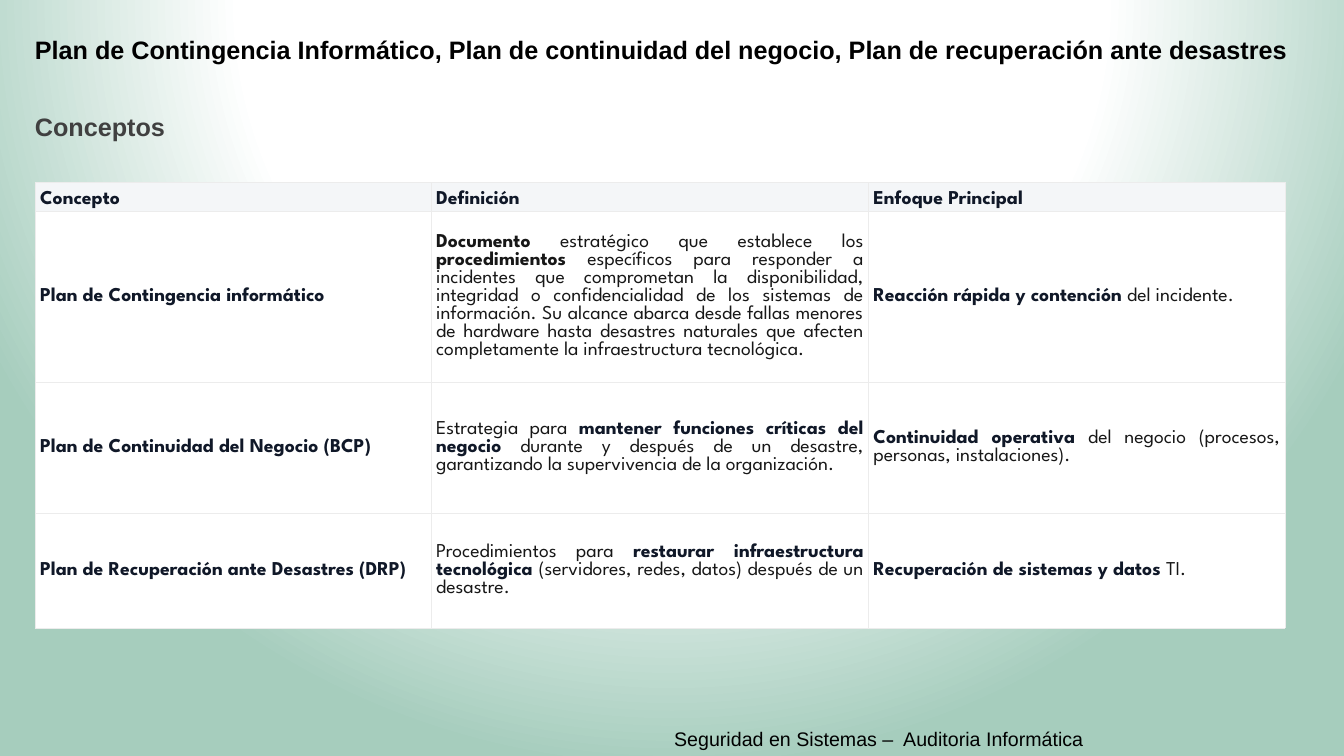
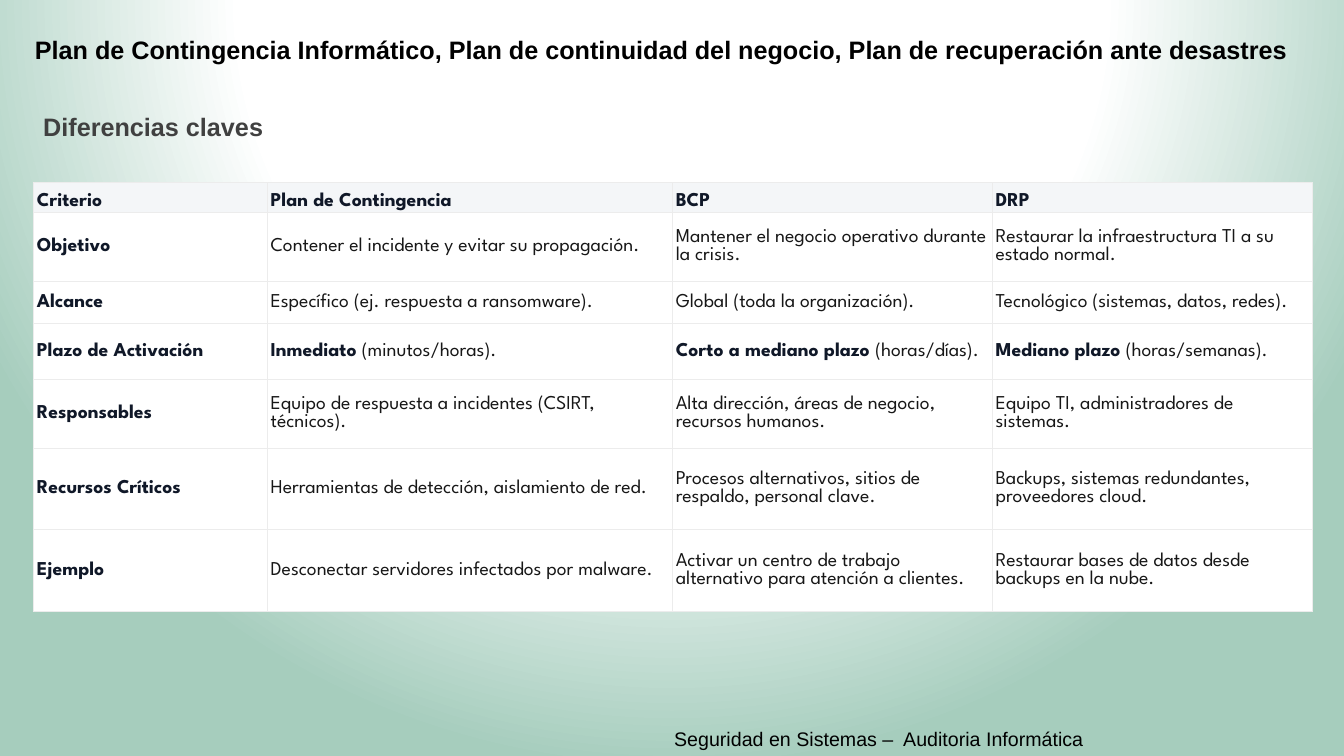
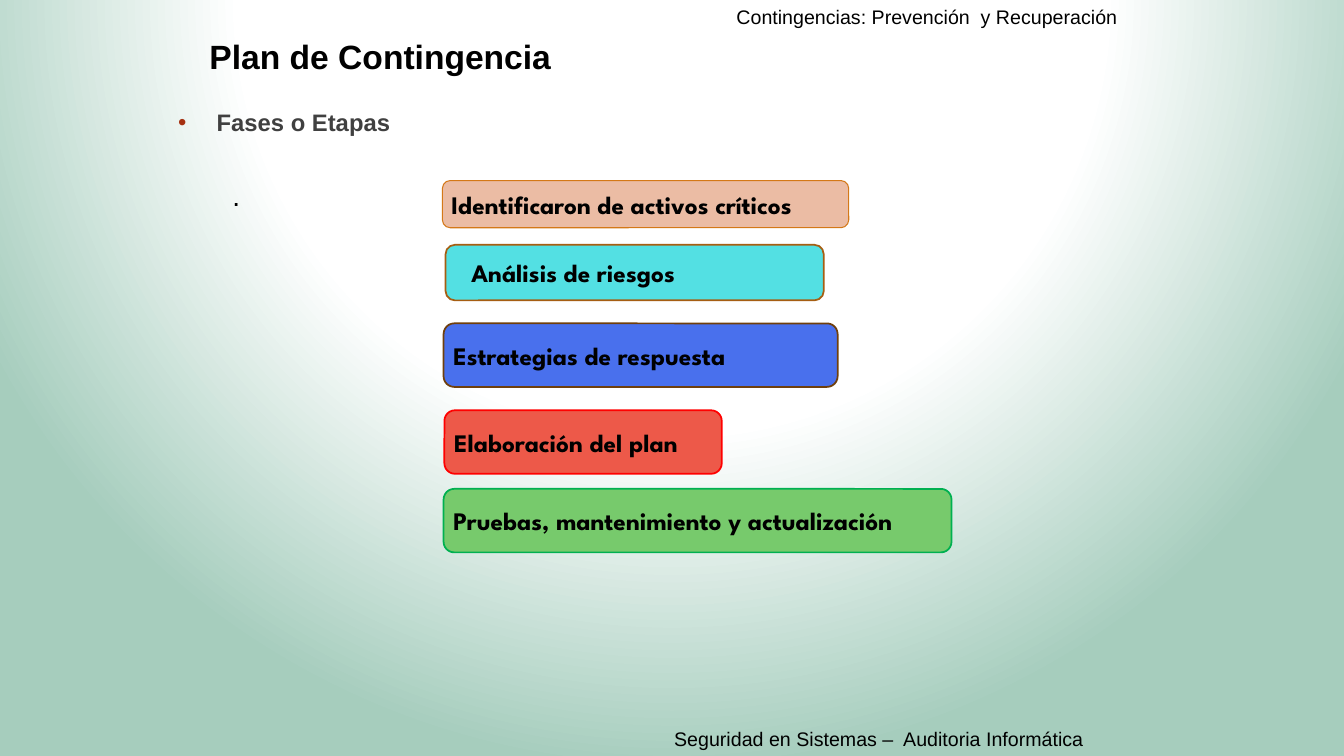
import dataclasses
import typing

import lxml.etree
import pptx
import pptx.dml.color
import pptx.enum.shapes
import pptx.enum.text
import pptx.oxml.ns
import pptx.presentation
import pptx.shapes.autoshape
import pptx.slide
import pptx.table
import pptx.text.text
import pptx.util

qn = pptx.oxml.ns.qn
LEFT = pptx.enum.text.PP_ALIGN.LEFT
JUSTIFY = pptx.enum.text.PP_ALIGN.JUSTIFY
TOP = pptx.enum.text.MSO_ANCHOR.TOP
MIDDLE = pptx.enum.text.MSO_ANCHOR.MIDDLE
BOTTOM = pptx.enum.text.MSO_ANCHOR.BOTTOM


@dataclasses.dataclass(frozen=True)
class Theme:
    sans: str = "Arial"
    display: str = "League Spartan"
    black: str = "000000"
    subtitle: str = "404040"
    key: str = "101828"
    body: str = "171717"
    bullet: str = "A53010"
    header_fill: str = "F4F6F8"
    cell_fill: str = "FFFFFF"
    border: str = "ECECEC"
    background: tuple[tuple[int, str], ...] = ((0, "FFFFFF"), (56, "FFFFFF"), (100, "A6CDBD"))
    small: float = 14
    bullet_size: float = 17
    heading: float = 18
    dot: float = 20
    title: float = 24
    border_width: float = 0.6


THEME = Theme()


class Box(typing.NamedTuple):
    """Left, top, width and height in centimetres."""
    left: float
    top: float
    width: float
    height: float

    def lengths(self) -> list[pptx.util.Length]:
        return [pptx.util.Cm(value) for value in self]


class Style(typing.NamedTuple):
    font: str
    size: float
    color: str
    bold: bool = False


class Run(typing.NamedTuple):
    text: str
    style: Style


class Phase(typing.NamedTuple):
    text: str
    box: Box
    fill: str
    line: str
    line_width: float = 1.25
    indent: float = 0.25


Cell = str | tuple[Run, ...]


class Grid(typing.NamedTuple):
    """Table content and measures; lengths in centimetres."""
    left: float
    columns: tuple[float, ...]
    heights: tuple[float, ...]
    inset_x: float
    inset_y: float
    align: pptx.enum.text.PP_ALIGN
    rows: tuple[tuple[Cell, ...], ...]


NOTE = Style(THEME.sans, THEME.small, THEME.black)
HEADING = Style(THEME.sans, THEME.heading, THEME.black, True)
BIG_TITLE = Style(THEME.sans, THEME.title, THEME.black, True)
SUBTITLE = Style(THEME.sans, THEME.heading, THEME.subtitle, True)
BULLET = Style(THEME.sans, THEME.bullet_size, THEME.subtitle, True)
DOT = Style(THEME.sans, THEME.dot, THEME.black)
PHASE = Style(THEME.display, THEME.heading, THEME.black, True)
KEY = Style(THEME.display, THEME.small, THEME.key, True)
BODY = Style(THEME.display, THEME.small, THEME.body)
STRONG = BODY._replace(bold=True)

TABLE_TOP = 4.6
FOOTER = "Seguridad en Sistemas –  Auditoria Informática"
PLANS_TITLE = ("Plan de Contingencia Informático, Plan de continuidad del negocio, "
               "Plan de recuperación ante desastres")

CONCEPTS = Grid(0.89, (9.98, 11.02, 10.49), (0.53, 4.09, 3.3, 2.9), 0.12, 0.07, JUSTIFY, (
    ("Concepto", "Definición", "Enfoque Principal"),
    ("Plan de Contingencia informático",
     (Run("Documento", STRONG),
      Run(" estratégico que establece los ", BODY),
      Run("procedimientos", STRONG),
      Run(" específicos para responder a incidentes que comprometan la disponibilidad, "
          "integridad o confidencialidad de los sistemas de información. Su alcance abarca "
          "desde fallas menores de hardware hasta desastres naturales que afecten "
          "completamente la infraestructura tecnológica.", BODY)),
     (Run("Reacción rápida y contención", KEY), Run(" del incidente.", BODY))),
    ("Plan de Continuidad del Negocio (BCP)",
     (Run("Estrategia para ", BODY),
      Run("mantener funciones críticas del negocio", KEY),
      Run(" durante y después de un desastre, garantizando la supervivencia "
          "de la organización.", BODY)),
     (Run("Continuidad operativa", KEY),
      Run(" del negocio (procesos, personas, instalaciones).", BODY))),
    ("Plan de Recuperación ante Desastres (DRP)",
     (Run("Procedimientos para ", BODY),
      Run("restaurar infraestructura tecnológica", KEY),
      Run(" (servidores, redes, datos) después de un desastre.", BODY)),
     (Run("Recuperación de sistemas y datos", KEY), Run(" TI.", BODY))),
))

DIFFERENCES = Grid(
    0.84, (5.89, 10.21, 8.06, 8.06), (0.76, 1.73, 1.07, 1.4, 1.73, 2.06, 2.06), 0.09, 0.05, LEFT, (
        ("Criterio", "Plan de Contingencia", "BCP", "DRP"),
        ("Objetivo", "Contener el incidente y evitar su propagación.",
         "Mantener el negocio operativo durante la crisis.",
         "Restaurar la infraestructura TI a su estado normal."),
        ("Alcance", "Específico (ej. respuesta a ransomware).",
         "Global (toda la organización).", "Tecnológico (sistemas, datos, redes)."),
        ("Plazo de Activación",
         (Run("Inmediato", KEY), Run(" (minutos/horas).", BODY)),
         (Run("Corto a mediano plazo", KEY), Run(" (horas/días).", BODY)),
         (Run("Mediano plazo", KEY), Run(" (horas/semanas).", BODY))),
        ("Responsables", "Equipo de respuesta a incidentes (CSIRT, técnicos).",
         "Alta dirección, áreas de negocio, recursos humanos.",
         "Equipo TI, administradores de sistemas."),
        ("Recursos Críticos", "Herramientas de detección, aislamiento de red.",
         "Procesos alternativos, sitios de respaldo, personal clave.",
         "Backups, sistemas redundantes, proveedores cloud."),
        ("Ejemplo", "Desconectar servidores infectados por malware.",
         "Activar un centro de trabajo alternativo para atención a clientes.",
         "Restaurar bases de datos desde backups en la nube."),
    ))

PHASES = (
    Phase("Identificaron de activos críticos", Box(11.15, 4.55, 10.24, 1.19),
          "EBBCA4", "D47817", line_width=0.75),
    Phase("Análisis de riesgos", Box(11.23, 6.17, 9.53, 1.4), "53E0E3", "A65E12", indent=0.66),
    Phase("Estrategias de respuesta", Box(11.18, 8.15, 9.93, 1.6), "4970ED", "6F3F0C"),
    Phase("Elaboración del plan", Box(11.2, 10.34, 6.99, 1.6), "ED5949", "FF0000"),
    Phase("Pruebas, mantenimiento y actualización", Box(11.18, 12.32, 12.8, 1.6),
          "77CA6C", "00B050"),
)


def rgb(value: str) -> pptx.dml.color.RGBColor:
    return pptx.dml.color.RGBColor.from_string(value)


def add_run(paragraph: pptx.text.text._Paragraph, text: str, style: Style) -> None:
    run = paragraph.add_run()
    run.text = text
    run.font.name = style.font
    run.font.size = pptx.util.Pt(style.size)
    run.font.bold = style.bold
    run.font.color.rgb = rgb(style.color)


def add_text(slide: pptx.slide.Slide, text: str, box: Box, style: Style,
             align: pptx.enum.text.PP_ALIGN = LEFT,
             anchor: pptx.enum.text.MSO_ANCHOR = TOP) -> pptx.text.text._Paragraph:
    frame = slide.shapes.add_textbox(*box.lengths()).text_frame
    frame.word_wrap = True
    frame.vertical_anchor = anchor
    paragraph = frame.paragraphs[0]
    paragraph.alignment = align
    add_run(paragraph, text, style)
    return paragraph


def add_bullet(paragraph: pptx.text.text._Paragraph, indent: float) -> None:
    properties = paragraph._p.get_or_add_pPr()
    properties.set("marL", str(pptx.util.Cm(indent)))
    properties.set("indent", str(-pptx.util.Cm(indent)))
    color = lxml.etree.SubElement(properties, qn("a:buClr"))
    lxml.etree.SubElement(color, qn("a:srgbClr"), val=THEME.bullet)
    lxml.etree.SubElement(properties, qn("a:buFont"), typeface=THEME.sans)
    lxml.etree.SubElement(properties, qn("a:buChar"), char="•")


def add_borders(cell: pptx.table._Cell) -> None:
    properties = cell._tc.get_or_add_tcPr()
    for side in ("a:lnL", "a:lnR", "a:lnT", "a:lnB"):
        line = lxml.etree.SubElement(properties, qn(side),
                                     w=str(pptx.util.Pt(THEME.border_width)))
        fill = lxml.etree.SubElement(line, qn("a:solidFill"))
        lxml.etree.SubElement(fill, qn("a:srgbClr"), val=THEME.border)


def add_grid(slide: pptx.slide.Slide, grid: Grid) -> None:
    box = Box(grid.left, TABLE_TOP, sum(grid.columns), sum(grid.heights))
    table = slide.shapes.add_table(
        len(grid.heights), len(grid.columns), *box.lengths()).table
    table.horz_banding = False
    for column, width in zip(table.columns, grid.columns):
        column.width = pptx.util.Cm(width)
    for row, height in zip(table.rows, grid.heights):
        row.height = pptx.util.Cm(height)
    for r, contents in enumerate(grid.rows):
        is_header = r == 0
        for c, content in enumerate(contents):
            cell = table.cell(r, c)
            add_borders(cell)
            cell.fill.solid()
            cell.fill.fore_color.rgb = rgb(THEME.header_fill if is_header else THEME.cell_fill)
            cell.margin_left = cell.margin_right = pptx.util.Cm(grid.inset_x)
            cell.margin_top = cell.margin_bottom = pptx.util.Cm(grid.inset_y)
            cell.vertical_anchor = BOTTOM if is_header else MIDDLE
            paragraph = cell.text_frame.paragraphs[0]
            paragraph.alignment = LEFT if is_header else grid.align
            if isinstance(content, str):
                content = (Run(content, KEY if is_header or c == 0 else BODY),)
            for run in content:
                add_run(paragraph, run.text, run.style)


def add_phase(slide: pptx.slide.Slide, phase: Phase) -> None:
    bar = slide.shapes.add_shape(
        pptx.enum.shapes.MSO_SHAPE.ROUNDED_RECTANGLE, *phase.box.lengths())
    bar.shadow.inherit = False
    bar.fill.solid()
    bar.fill.fore_color.rgb = rgb(phase.fill)
    bar.line.color.rgb = rgb(phase.line)
    bar.line.width = pptx.util.Pt(phase.line_width)
    frame = bar.text_frame
    frame.word_wrap = True
    frame.vertical_anchor = MIDDLE
    # The rounded corners already push the text in a little.
    frame.margin_left = pptx.util.Cm(phase.indent - 0.08)
    frame.margin_right = 0
    frame.paragraphs[0].alignment = LEFT
    add_run(frame.paragraphs[0], phase.text, PHASE)


def set_background(master: pptx.slide.SlideMaster) -> None:
    """Give every slide the radial gradient, centred below its top edge."""
    master.background.fill.gradient()
    gradient = master.element.find(".//" + qn("p:bgPr") + "/" + qn("a:gradFill"))
    for child in list(gradient):
        gradient.remove(child)
    stops = lxml.etree.SubElement(gradient, qn("a:gsLst"))
    for percent, color in THEME.background:
        stop = lxml.etree.SubElement(stops, qn("a:gs"), pos=str(percent * 1000))
        lxml.etree.SubElement(stop, qn("a:srgbClr"), val=color)
    shade = lxml.etree.SubElement(gradient, qn("a:path"), path="circle")
    lxml.etree.SubElement(shade, qn("a:fillToRect"),
                          l="50000", t="-80000", r="50000", b="180000")


def add_slide(deck: pptx.presentation.Presentation) -> pptx.slide.Slide:
    """Add a blank slide with the shared footer."""
    slide = deck.slides.add_slide(deck.slide_layouts[6])
    add_text(slide, FOOTER, Box(16.74, 18.19, 11.76, 0.86), NOTE)
    return slide


def add_table_slide(deck: pptx.presentation.Presentation, subtitle: str,
                    subtitle_left: float, grid: Grid) -> None:
    slide = add_slide(deck)
    add_text(slide, subtitle, Box(subtitle_left, 2.67, 7.92, 1.4), SUBTITLE, JUSTIFY)
    add_text(slide, PLANS_TITLE, Box(0.63, 0.74, 32.21, 1.4), HEADING)
    add_grid(slide, grid)


def add_phases_slide(deck: pptx.presentation.Presentation) -> None:
    slide = add_slide(deck)
    add_text(slide, "Contingencias: Prevención  y Recuperación",
             Box(18.31, 0, 10.11, 0.86), NOTE)
    subtitle = add_text(slide, "Fases o Etapas", Box(4.24, 2.59, 5.94, 1.4), BULLET, JUSTIFY)
    add_bullet(subtitle, 0.97)
    add_text(slide, "Plan de Contingencia", Box(5.03, 0.79, 20.65, 1.4), BIG_TITLE)
    add_text(slide, ".", Box(5.61, 4.37, 22.02, 1.12), DOT, JUSTIFY, MIDDLE)
    for phase in PHASES:
        add_phase(slide, phase)


def main() -> None:
    deck = pptx.Presentation()
    deck.slide_width = pptx.util.Cm(33.87)
    deck.slide_height = pptx.util.Cm(19.05)
    set_background(deck.slide_master)
    add_table_slide(deck, "Conceptos", 0.63, CONCEPTS)
    add_table_slide(deck, "Diferencias claves", 0.84, DIFFERENCES)
    add_phases_slide(deck)
    deck.save("out.pptx")


if __name__ == "__main__":
    main()
